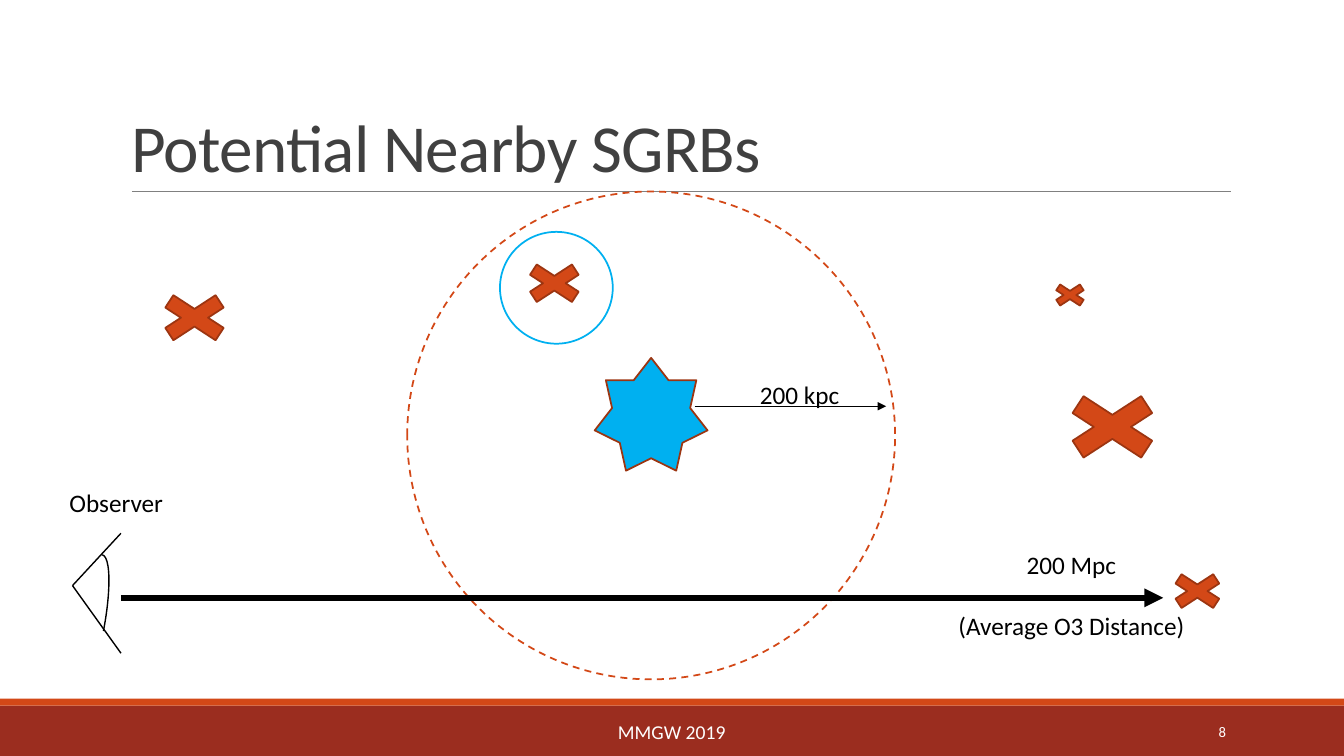
from lxml import etree
from pptx import Presentation
from pptx.dml.color import RGBColor
from pptx.enum.dml import MSO_LINE
from pptx.enum.shapes import MSO_CONNECTOR, MSO_SHAPE as SHAPE
from pptx.enum.text import MSO_ANCHOR as ANCHOR, MSO_AUTO_SIZE, PP_ALIGN as ALIGN
from pptx.oxml.ns import qn
from pptx.util import Pt

FONT = "Calibri"
BLACK = RGBColor(0x00, 0x00, 0x00)
WHITE = RGBColor(0xFF, 0xFF, 0xFF)
TITLE_GRAY = RGBColor(0x40, 0x40, 0x40)
RULE_GRAY = RGBColor(0x80, 0x80, 0x80)
MAROON = RGBColor(0x9B, 0x2D, 0x1F)
ORANGE = RGBColor(0xD3, 0x48, 0x17)
RUST = RGBColor(0x9C, 0x35, 0x11)
BLUE = RGBColor(0x00, 0xB0, 0xF0)

CROSS_RATIO = 0.65  # height to width
BURSTS = [(367.2, 183.6, 57.6), (748.1, 200.2, 32.4), (104.4, 204.5, 69.1),
          (747.4, 274.3, 94.3), (829.4, 405.4, 51.8)]  # left, top, width
EYE_CORNER = (51.8, 418.3)
EYE_RIGHT = 86.4


def format_runs(p, size, color):
    for r in p.runs:
        r.font.name = FONT
        r.font.size = Pt(size)
        r.font.color.rgb = color


def add_title(s, text):
    title = s.shapes.title
    title.left, title.top, title.width, title.height = Pt(86.4), Pt(22.3), Pt(792), Pt(114.5)
    tf = title.text_frame
    tf.text = text
    tf.auto_size = MSO_AUTO_SIZE.NONE
    tf.vertical_anchor = ANCHOR.BOTTOM
    p = tf.paragraphs[0]
    p.alignment = ALIGN.LEFT
    p.line_spacing = 0.85
    format_runs(p, 48, TITLE_GRAY)
    p.runs[0].font._element.set("spc", "-50")


def add_label(s, box, lines, size=18, color=BLACK, align=ALIGN.LEFT,
              anchor=ANCHOR.TOP, gap=0):
    """Add a text box with one paragraph per line, gap points apart."""
    tf = s.shapes.add_textbox(*map(Pt, box)).text_frame
    tf.word_wrap = True
    tf.vertical_anchor = anchor
    tf.text = "\n".join(lines)
    for i, p in enumerate(tf.paragraphs):
        p.alignment = align
        if i:
            p.space_before = Pt(gap)
        format_runs(p, size, color)


def add_figure(s, kind, box, fill=None, line=None, width=1.25):
    sp = s.shapes.add_shape(kind, *map(Pt, box))
    sp.shadow.inherit = False
    if fill is None:
        sp.fill.background()
    else:
        sp.fill.solid()
        sp.fill.fore_color.rgb = fill
    if line is None:
        sp.line.fill.background()
    else:
        sp.line.color.rgb = line
        sp.line.width = Pt(width)
    return sp


def add_line(s, start, end, color=BLACK, width=1, arrow=False):
    line = s.shapes.add_connector(MSO_CONNECTOR.STRAIGHT, *map(Pt, start + end))
    line.line.color.rgb = color
    line.line.width = Pt(width)
    if arrow:
        ln = line.line._get_or_add_ln()
        etree.SubElement(ln, qn("a:tailEnd"), type="triangle")
    etree.SubElement(line._element.spPr, qn("a:effectLst"))


def add_frame(s):
    add_figure(s, SHAPE.RECTANGLE, (0, 504, 960, 36), MAROON)
    add_figure(s, SHAPE.RECTANGLE, (0, 499, 960, 5), ORANGE)
    add_line(s, (94.3, 136.8), (879.1, 136.8), RULE_GRAY, 0.5)
    add_label(s, (290.2, 508.3, 379.4, 28.8), ["MMGW 2019"], 14, WHITE,
              ALIGN.CENTER, ANCHOR.MIDDLE)
    add_label(s, (779.8, 508.3, 103, 28.8), ["8"], 10.5, WHITE,
              ALIGN.RIGHT, ANCHOR.MIDDLE)


def add_galaxy(s):
    add_figure(s, SHAPE.STAR_7_POINT, (424.8, 255.6, 80.6, 80.6), BLUE, RUST)
    halo = add_figure(s, SHAPE.OVAL, (290.9, 136.8, 348.5, 348.5), line=ORANGE)
    halo.line.dash_style = MSO_LINE.DASH
    add_line(s, (496.1, 290.2), (632.9, 290.2), arrow=True)
    add_label(s, (535.7, 267.1, 113.8, 28.8), ["200 kpc"])


def add_observer(s):
    for y in (380.9, 466.6):
        add_line(s, (EYE_RIGHT, y), EYE_CORNER)
    eye = add_figure(s, SHAPE.ARC, (51.8, 395.3, 22.3, 106.6), line=BLACK, width=1)
    eye.rotation = 10.9
    add_label(s, (42.5, 344.2, 113.8, 28.8), ["Observer"])
    add_line(s, (EYE_RIGHT, 427), (830.9, 427), width=4.5, arrow=True)
    add_label(s, (670.3, 388.8, 190, 72.7), ["200 Mpc", "(Average O3 Distance)"],
              align=ALIGN.CENTER, gap=22)


def main():
    prs = Presentation()
    prs.slide_width, prs.slide_height = Pt(960), Pt(540)
    s = prs.slides.add_slide(prs.slide_layouts[5])
    add_frame(s)
    add_title(s, "Potential Nearby SGRBs")
    add_galaxy(s)
    add_observer(s)
    for left, top, width in BURSTS:
        add_figure(s, SHAPE.MATH_MULTIPLY, (left, top, width, width * CROSS_RATIO),
                   ORANGE, RUST)
    add_figure(s, SHAPE.OVAL, (357.1, 165.6, 80.6, 79.9), line=BLUE)
    prs.save("out.pptx")


if __name__ == "__main__":
    main()
